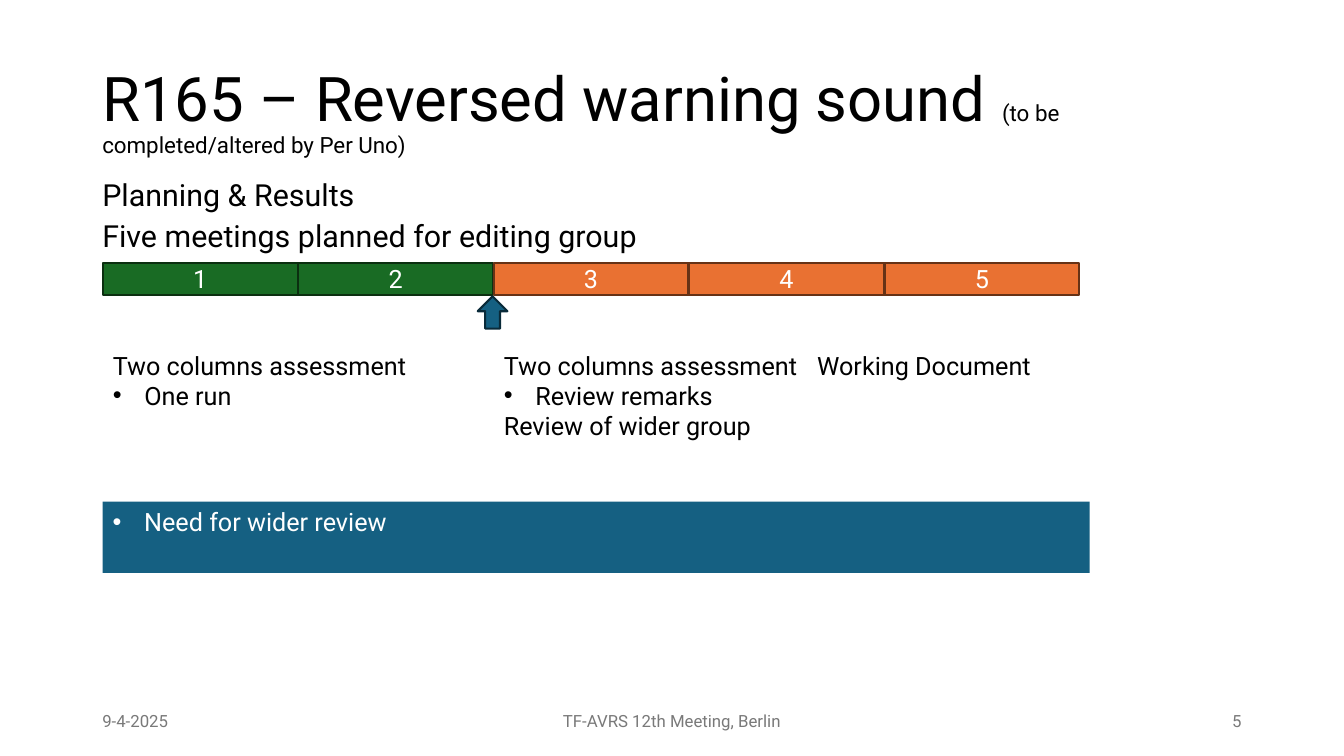
from lxml import etree
from pptx import Presentation
from pptx.dml.color import RGBColor
from pptx.enum.shapes import MSO_SHAPE
from pptx.enum.text import MSO_ANCHOR, PP_ALIGN
from pptx.oxml.ns import qn
from pptx.util import Pt

RECT, ARROW = MSO_SHAPE.RECTANGLE, MSO_SHAPE.UP_ARROW
TOP, MID = MSO_ANCHOR.TOP, MSO_ANCHOR.MIDDLE
LEFT, CENTER, RIGHT = PP_ALIGN.LEFT, PP_ALIGN.CENTER, PP_ALIGN.RIGHT
FONT = "Roboto"
BLACK, WHITE, GREY, BLUE = "000000", "FFFFFF", "797979", "156082"
DONE, TODO = ("196B24", "0B2F10"), ("E97132", "663216")
BULLET = "• "
INDENT = 22.5

TITLE = [("R165 – Reversed warning sound ", 44),
         ("(to be completed/altered by Per Uno)", 16)]
HEADS = ["Planning & Results", "Five meetings planned for editing group"]
STEPS = [("1", DONE), ("2", DONE), ("3", TODO), ("4", TODO), ("5", TODO)]
# left, width, height, lines
NOTES = [
    (73.5, 278.6, 50.9, ["Two columns assessment", "• One run"]),
    (352.8, 278.6, 72.7, ["Two columns assessment", "• Review remarks",
                          "Review of wider group"]),
    (576.6, 176, 29.1, ["Working Document"]),
]
NEED = ["• Need for wider review"]
# left, width, align, text
FOOT = [(66, 216, LEFT, "9-4-2025"),
        (318, 324, CENTER, "TF-AVRS 12th Meeting, Berlin"),
        (678, 216, RIGHT, "5")]


def color(code):
    return RGBColor.from_string(code)


def add_run(para, text, size, ink):
    run = para.add_run()
    run.text = text
    style = {"name": FONT, "size": Pt(size)}
    for key, value in style.items():
        setattr(run.font, key, value)
    run.font.color.rgb = color(ink)


def indent(para):
    """Give the paragraph a bullet with a hanging indent."""
    props = para._p.get_or_add_pPr()
    props.set("marL", str(Pt(INDENT)))
    props.set("indent", str(-Pt(INDENT)))
    etree.SubElement(props, qn("a:buFont"), typeface="Arial")
    etree.SubElement(props, qn("a:buChar"), char=BULLET.strip())


def write(shape, lines, size=18, ink=BLACK, anchor=TOP, align=LEFT, gap=None):
    """Fill a shape with lines; each is a string or a list of (text, size)."""
    frame = shape.text_frame
    frame.word_wrap = True
    frame.vertical_anchor = anchor
    for i, line in enumerate(lines):
        para = frame.add_paragraph() if i else frame.paragraphs[0]
        para.alignment = align
        if gap:
            para.line_spacing = gap
        if isinstance(line, str):
            if line.startswith(BULLET):
                indent(para)
            line = [(line.removeprefix(BULLET), size)]
        for text, points in line:
            add_run(para, text, points, ink)


def add_text(box, lines, **style):
    write(slide.shapes.add_textbox(*map(Pt, box)), lines, **style)


def add_block(kind, box, fill, edge=None):
    shape = slide.shapes.add_shape(kind, *map(Pt, box))
    shape.shadow.inherit = False
    shape.fill.solid()
    shape.fill.fore_color.rgb = color(fill)
    if edge:
        shape.line.color.rgb = color(edge)
        shape.line.width = Pt(1.5)
    else:
        shape.line.fill.background()
    return shape


deck = Presentation()
deck.slide_width, deck.slide_height = Pt(960), Pt(540)
slide = deck.slides.add_slide(deck.slide_layouts[6])

add_text((66, 28.8, 828, 104.4), [TITLE], anchor=MID, gap=0.9)
for i, head in enumerate(HEADS):
    add_text((66, 129.6 + 28.8 * i, 828, 28.8), [head], size=21.7, gap=0.7)
for left, width, align, text in FOOT:
    add_text((left, 500.4, width, 28.8), [text], size=12, ink=GREY,
             anchor=MID, align=align)

STEP_W, PITCH = 139.2, 139.6
for i, (name, (fill, edge)) in enumerate(STEPS):
    step = add_block(RECT, (73.4 + PITCH * i, 187.8, STEP_W, 22.8), fill, edge)
    write(step, [name], ink=WHITE, anchor=MID, align=CENTER)
add_block(ARROW, (341.3, 211.7, 21.2, 23), BLUE, "092A39")

for left, width, height, lines in NOTES:
    add_text((left, 246.4, width, height), lines)
need = add_block(RECT, (73.4, 358.4, 705, 50.9), BLUE)
write(need, NEED, ink=WHITE)

deck.save("out.pptx")
